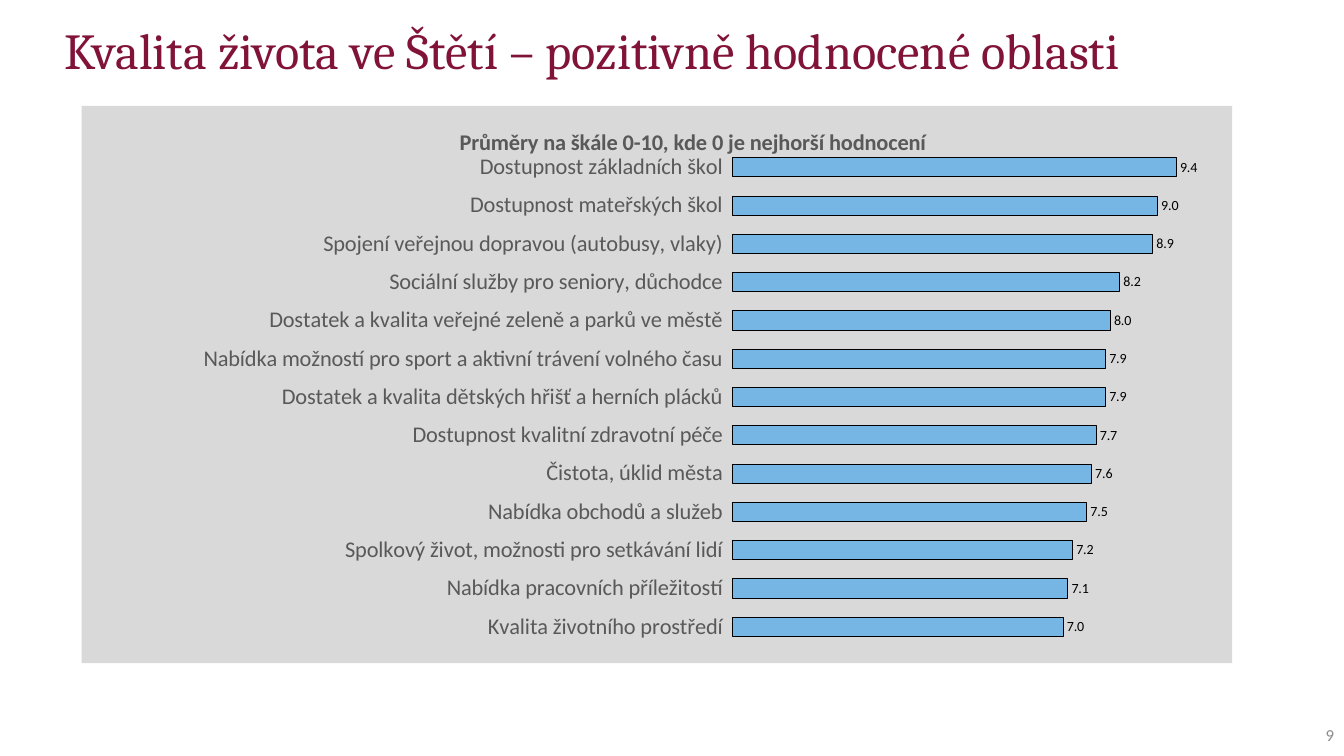
from lxml import etree
from pptx import Presentation
from pptx.chart.data import CategoryChartData
from pptx.dml.color import RGBColor
from pptx.enum import chart as ch, text
from pptx.oxml import parse_xml
from pptx.oxml.ns import nsdecls, qn
from pptx.util import Inches, Pt

# Content
HEADLINE = "Kvalita života ve Štětí – pozitivně hodnocené oblasti"
PAGE_NUMBER = "9"
SCALE_NOTE = "Průměry na škále 0-10, kde 0 je nejhorší hodnocení"
RATINGS = [
    ("Dostupnost základních škol", 9.4),
    ("Dostupnost mateřských škol", 9.0),
    ("Spojení veřejnou dopravou (autobusy, vlaky)", 8.9),
    ("Sociální služby pro seniory, důchodce", 8.2),
    ("Dostatek a kvalita veřejné zeleně a parků ve městě", 8.0),
    ("Nabídka možností pro sport a aktivní trávení volného času", 7.9),
    ("Dostatek a kvalita dětských hřišť a herních plácků", 7.9),
    ("Dostupnost kvalitní zdravotní péče", 7.7),
    ("Čistota, úklid města", 7.6),
    ("Nabídka obchodů a služeb", 7.5),
    ("Spolkový život, možnosti pro setkávání lidí", 7.2),
    ("Nabídka pracovních příležitostí", 7.1),
    ("Kvalita životního prostředí", 7.0),
]
WINE, GREY, PANEL, BLUE, BLACK = "811339", "595959", "D9D9D9", "75B6E5", "000000"


def rgb(value):
    return RGBColor.from_string(value)


def style(font, size, color, name="Calibri", bold=False):
    font.size, font.name, font.bold = Pt(size), name, bold
    font.color.rgb = rgb(color)


def add_text(box, words, size, color, name, align, anchor, inset=None):
    frame = slide.shapes.add_textbox(*map(Inches, box)).text_frame
    frame.word_wrap = True
    frame.vertical_anchor = anchor
    if inset is not None:
        frame.margin_left = frame.margin_right = Inches(inset)
        frame.margin_top = frame.margin_bottom = Inches(inset)
    paragraph = frame.paragraphs[0]
    paragraph.alignment = align
    run = paragraph.add_run()
    run.text = words
    style(run.font, size, color, name)
    return paragraph


def place(parent, index, **fractions):
    """Give a chart part a manual layout in fractions of the chart."""
    for old in parent.findall(qn("c:layout")):
        parent.remove(old)
    layout = etree.Element(qn("c:layout"))
    manual = etree.SubElement(layout, qn("c:manualLayout"))
    if "w" in fractions:
        etree.SubElement(manual, qn("c:layoutTarget")).set("val", "inner")
    for key in ("x", "y"):
        etree.SubElement(manual, qn(f"c:{key}Mode")).set("val", "edge")
    for key, value in fractions.items():
        etree.SubElement(manual, qn(f"c:{key}")).set("val", str(value))
    parent.insert(index, layout)


prs = Presentation()
prs.slide_width, prs.slide_height = Inches(13.33), Inches(7.5)
slide = prs.slides.add_slide(prs.slide_layouts[6])

# Headline and page number
headline = add_text((0.64, 0.26, 11.92, 1.07), HEADLINE, 36, WINE, "Cambria",
                    text.PP_ALIGN.LEFT, text.MSO_ANCHOR.TOP, 0)
headline.line_spacing = 0.9
add_text((12.75, 7.09, 0.58, 0.4), PAGE_NUMBER, 12, "8C8C8C", "Calibri",
         text.PP_ALIGN.RIGHT, text.MSO_ANCHOR.MIDDLE)

# Bar chart on a grey panel
data = CategoryChartData(number_format="0.0")
data.categories = [area for area, _ in RATINGS]
data.add_series("Series 1", [score for _, score in RATINGS])
ratings = slide.shapes.add_chart(
    ch.XL_CHART_TYPE.BAR_CLUSTERED,
    *map(Inches, (0.81, 1.05, 11.41, 5.53)), data).chart
ratings.has_legend = False
style(ratings.font, 10, BLACK)
space = ratings.element if hasattr(ratings, "element") else ratings._chartSpace
panel = parse_xml(
    f'<c:spPr {nsdecls("c", "a")}><a:solidFill><a:srgbClr val="{PANEL}"/>'
    '</a:solidFill><a:ln><a:noFill/></a:ln></c:spPr>')
chart_part = space.find(qn("c:chart"))
chart_part.addnext(panel)

# Scale note and plot position
ratings.has_title = True
note = ratings.chart_title.text_frame.paragraphs[0].add_run()
note.text = SCALE_NOTE
style(note.font, 16, GREY, bold=True)
place(chart_part.find(qn("c:title")), 1, x=0.325, y=0.03)
place(chart_part.find(qn("c:plotArea")), 0, x=0.566, y=0.076, w=0.41, h=0.893)

# Axes
areas = ratings.category_axis
areas.reverse_order = True
areas.has_major_gridlines = False
areas.major_tick_mark = ch.XL_TICK_MARK.OUTSIDE
areas.format.line.color.rgb = rgb(PANEL)
areas.format.line.width = Pt(0.75)
style(areas.tick_labels.font, 16, GREY)
scores = ratings.value_axis
scores.minimum_scale, scores.maximum_scale, scores.major_unit = 0, 10, 1
scores.has_major_gridlines = False
scores.visible = False

# Bars and their values
plot = ratings.plots[0]
plot.gap_width = 100
plot.vary_by_categories = False
bars = plot.series[0]
bars.format.fill.solid()
bars.format.fill.fore_color.rgb = rgb(BLUE)
bars.format.line.color.rgb = rgb(BLACK)
bars.format.line.width = Pt(0.5)
labels = bars.data_labels
labels.show_value = True
labels.number_format, labels.number_format_is_linked = "#,##0.0", False
labels.position = ch.XL_LABEL_POSITION.OUTSIDE_END
style(labels.font, 10, BLACK)

prs.save("out.pptx")
